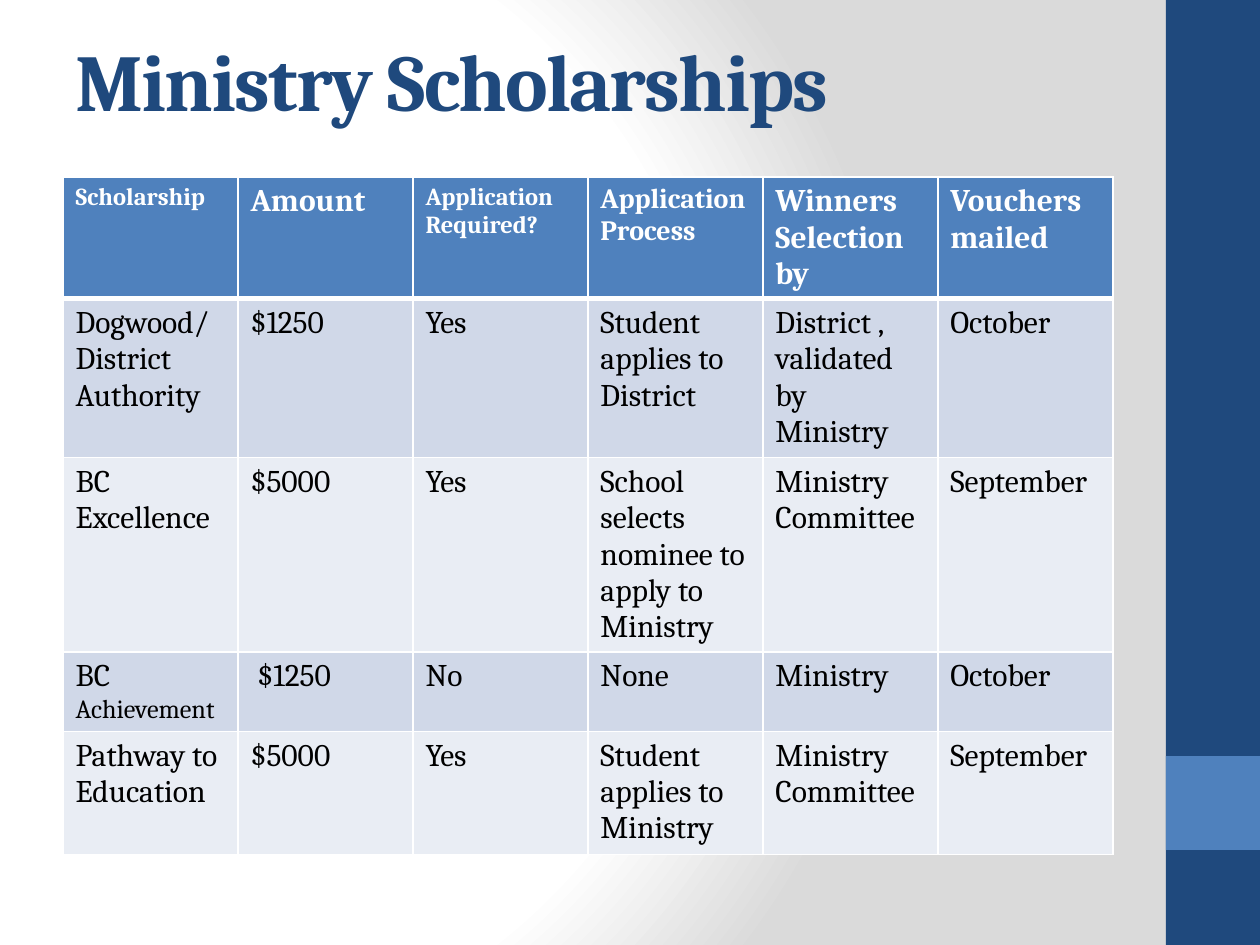
"""Build the Ministry Scholarships slide."""
from pptx import Presentation
from pptx.dml.color import RGBColor
from pptx.enum.shapes import MSO_SHAPE
from pptx.enum.text import MSO_ANCHOR, PP_ALIGN
from pptx.oxml import parse_xml
from pptx.oxml.ns import nsdecls, qn
from pptx.util import Pt

RECT = MSO_SHAPE.RECTANGLE
MIDDLE = MSO_ANCHOR.MIDDLE
LEFT = PP_ALIGN.LEFT

NAVY = RGBColor(0x1F, 0x49, 0x7D)
BLUE = RGBColor(0x4F, 0x81, 0xBD)
BAND = RGBColor(0xD0, 0xD8, 0xE8)
PALE = RGBColor(0xE9, 0xED, 0xF4)
GRAY = RGBColor(0xDA, 0xDA, 0xDA)
WHITE = RGBColor(0xFF, 0xFF, 0xFF)
BLACK = RGBColor(0x00, 0x00, 0x00)

FONT = "Cambria"
EMU_PER_PX = 914400 / 126
TITLE_ONLY = 5

HEADERS = [
    ("Scholarship", 14), ("Amount", 18), ("Application Required?", 14),
    ("Application Process", 16), ("Winners Selection by", 18), ("Vouchers mailed", 18),
]
AWARDS = [
    ["Dogwood/District Authority", "$1250", "Yes", "Student applies to District",
     "District , validated by Ministry", "October"],
    ["BC Excellence", "$5000", "Yes", "School selects nominee to apply to Ministry",
     "Ministry Committee", "September"],
    ["BC ", " $1250", "No", "None", "Ministry", "October"],
    ["Pathway to Education", "$5000", "Yes", "Student applies to Ministry",
     "Ministry Committee", "September"],
]
ROW_HEIGHTS = [121, 159, 194, 78, 123]


def px(n):
    return round(n * EMU_PER_PX)


class Deck:
    """Hold the style and the current slide."""

    def __init__(self, width, height):
        self.prs = Presentation()
        self.prs.slide_width, self.prs.slide_height = px(width), px(height)
        self.slide = self.prs.slides.add_slide(self.prs.slide_layouts[TITLE_ONLY])

    def background(self, stops, left, top, right, bottom):
        self.slide.background.fill.gradient()
        old = self.slide._element.find(".//" + qn("a:gradFill"))
        gs = "".join(f'<a:gs pos="{pos * 1000}"><a:srgbClr val="{color}"/></a:gs>'
                     for pos, color in stops)
        grad = parse_xml(
            f'<a:gradFill {nsdecls("a")} rotWithShape="1"><a:gsLst>{gs}</a:gsLst>'
            f'<a:path path="circle"><a:fillToRect l="{left * 1000}" t="{top * 1000}" '
            f'r="{right * 1000}" b="{bottom * 1000}"/></a:path></a:gradFill>')
        old.getparent().replace(old, grad)

    def font(self, font, size, color, bold=False):
        font.name, font.size, font.bold = FONT, Pt(size), bold
        font.color.rgb = color

    def rect(self, x, y, w, h, color):
        sp = self.slide.shapes.add_shape(RECT, px(x), px(y), px(w), px(h))
        sp.shadow.inherit = False
        sp.fill.solid()
        sp.fill.fore_color.rgb = color
        sp.line.fill.background()

    def title(self, text, x, y, w, h, size, spacing):
        sp = self.slide.shapes.title
        sp.left, sp.top, sp.width, sp.height = px(x), px(y), px(w), px(h)
        tf = sp.text_frame
        tf.vertical_anchor = MIDDLE
        p = tf.paragraphs[0]
        p.alignment = LEFT
        r = p.add_run()
        r.text = text
        self.font(r.font, size, NAVY, True)
        r.font._element.set("spc", str(spacing * 100))

    def cell(self, cell, text, size, color, fill, bold=False, bottom=1):
        tcPr = cell._tc.get_or_add_tcPr()
        for side, width in zip("LRTB", (1, 1, 1, bottom)):
            tcPr.append(parse_xml(
                f'<a:ln{side} {nsdecls("a")} w="{Pt(width)}"><a:solidFill>'
                f'<a:srgbClr val="{WHITE}"/></a:solidFill></a:ln{side}>'))
        cell.fill.solid()
        cell.fill.fore_color.rgb = fill
        p = cell.text_frame.paragraphs[0]
        p.add_run().text = text
        self.font(p.font, size, color, bold)

    def table(self, x, y, col_width, headers, rows, heights):
        table = self.slide.shapes.add_table(
            len(heights), len(headers), px(x), px(y),
            px(col_width * len(headers)), px(sum(heights))).table
        for row, height in zip(table.rows, heights):
            row.height = px(height)
        for col, (text, size) in enumerate(headers):
            self.cell(table.cell(0, col), text, size, WHITE, BLUE, True, 3)
        for i, row in enumerate(rows, 1):
            for col, text in enumerate(row):
                self.cell(table.cell(i, col), text, 18, BLACK, BAND if i % 2 else PALE)
        return table


def main():
    deck = Deck(1260, 945)
    deck.background([(0, WHITE), (75, WHITE), (100, GRAY)], 20, 50, 100, 50)
    deck.rect(1166, 0, 94, 945, NAVY)
    deck.rect(1166, 756, 94, 94, BLUE)
    deck.title("Ministry Scholarships", 63, 0, 1050, 158, 46, -1)
    table = deck.table(63, 177, 175, HEADERS, AWARDS, ROW_HEIGHTS)
    r = table.cell(3, 0).text_frame.paragraphs[0].add_run()
    r.text = "Achievement"
    r.font.size = Pt(15)
    deck.prs.save("out.pptx")


if __name__ == "__main__":
    main()
